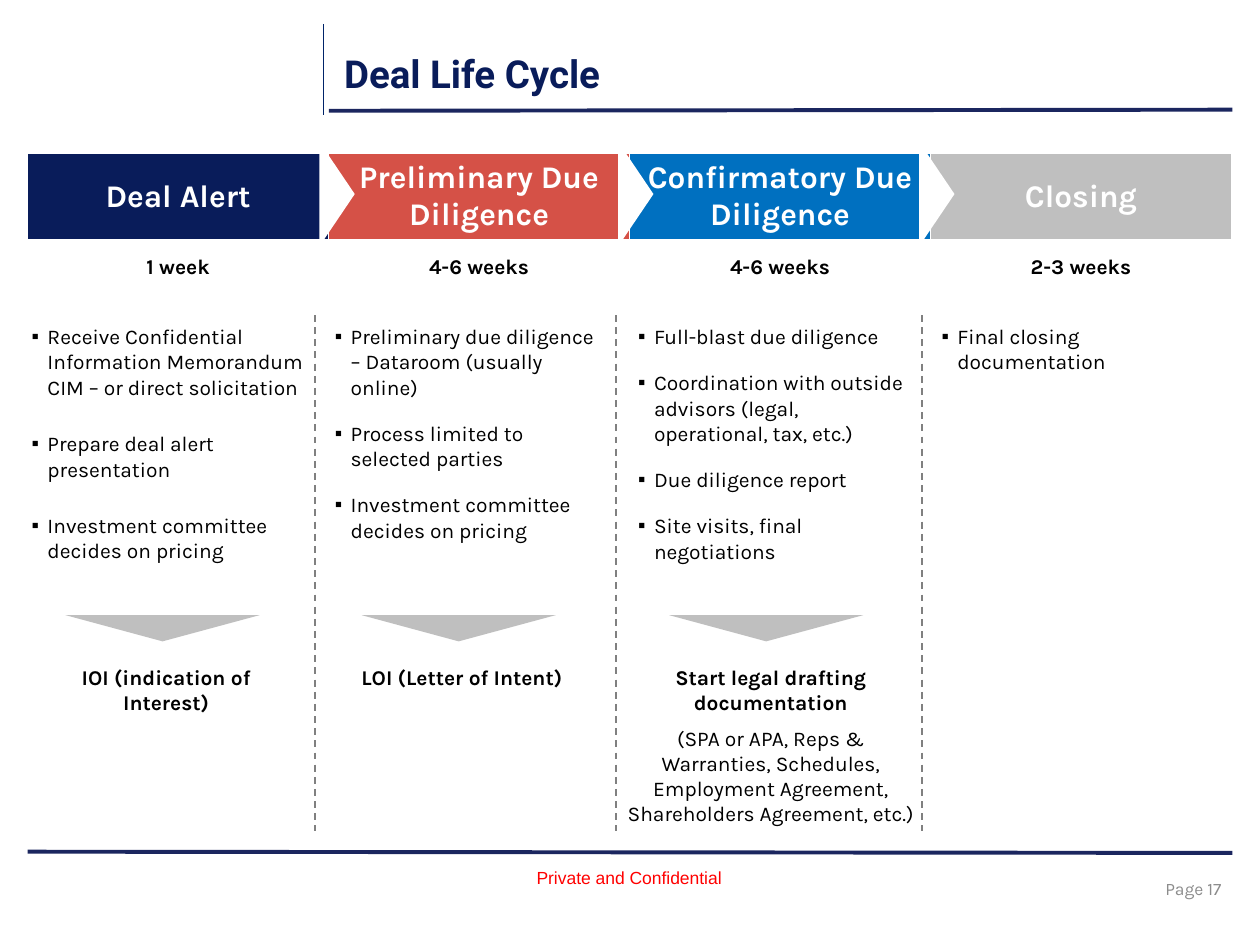
from typing import NamedTuple

from pptx import Presentation
from pptx.dml.color import RGBColor
from pptx.enum.dml import MSO_LINE_DASH_STYLE as Dash
from pptx.enum.shapes import MSO_CONNECTOR, MSO_SHAPE
from pptx.enum.text import MSO_ANCHOR as Anchor, MSO_AUTO_SIZE as AutoSize, PP_ALIGN as Align
from pptx.oxml.ns import qn
from pptx.util import Pt
from lxml.etree import SubElement

COLORS = {
    "navy": "091C5A", "red": "D55147", "blue": "0070C0", "silver": "BFBFBF",
    "rule": "1B265F", "title_rule": "002368", "dash": "808080",
    "page": "8C8C8C", "notice": "FF0000", "white": "FFFFFF", "black": "000000",
}
COMPARISON_LAYOUT = 4  # a title and four body placeholders
TABLE_LEFT, TABLE_TOP, COLUMN_WIDTH = 15.8, 87.8, 172
HEADER_HEIGHT, DURATION_HEIGHT = 48, 31
LIST_LEFT, LIST_PITCH, LIST_TOP = 15.1, 173.3, 182
LIST_WIDTH, LIST_HEIGHT = 161.5, 297
NOTCH_WIDTH, NOTCH_HEIGHT, NOTCH_TOP = 59.8, 20.2, 100.8
ARROW_WIDTH, ARROW_HEIGHT, ARROW_TOP = 111, 15, 351.5
OUTCOME_TOP = 376
DIVIDER_TOP, DIVIDER_BOTTOM = 180, 475


class Stage(NamedTuple):
    name: str
    color: str
    duration: str
    tasks: list[str]
    space_after: float = 6


class Milestone(NamedTuple):
    """What ends a stage: its arrow, the text below and the divider to the right."""
    arrow_left: float
    text_left: float
    text_width: float
    text_height: float
    outcome: str
    detail: str
    notch_left: float
    divider_x: float


class Rule(NamedTuple):
    x1: float
    y1: float
    x2: float
    y2: float
    color: str
    weight: float
    dashed: bool = False


STAGES = [
    Stage("Deal Alert", "navy", "1 week", [
        "Receive Confidential Information Memorandum CIM – or direct solicitation",
        "Prepare deal alert presentation",
        "Investment committee decides on pricing"], 12),
    Stage("Preliminary Due Diligence", "red", "4-6 weeks", [
        "Preliminary due diligence – Dataroom (usually online)",
        "Process limited to selected parties",
        "Investment committee decides on pricing"]),
    Stage("Confirmatory Due Diligence", "blue", "4-6 weeks", [
        "Full-blast due diligence",
        "Coordination with outside advisors (legal, operational, tax, etc.)",
        "Due diligence report",
        "Site visits, final negotiations"]),
    Stage("Closing", "silver", "2-3 weeks", ["Final closing documentation"]),
]
MILESTONES = [
    Milestone(37.4, 30, 130, 36, "IOI (indication of Interest)", "", 162.7, 180),
    Milestone(206.6, 184, 160, 22, "LOI (Letter of Intent)", "", 333.4, 352),
    Milestone(382.3, 353.5, 174, 99, "Start legal drafting documentation",
              "(SPA or APA, Reps & Warranties, Schedules, Employment Agreement, "
              "Shareholders Agreement, etc.)", 505.4, 527),
]
RULES = [
    Rule(15.8, 486.7, 704.2, 487.4, "rule", 2.25),
    Rule(188, 63.3, 704.2, 62.7, "rule", 2.25),
    Rule(185, 13.7, 185, 66, "title_rule", 0.75),
    *(Rule(m.divider_x, DIVIDER_TOP, m.divider_x, DIVIDER_BOTTOM, "dash", 1, True)
      for m in MILESTONES),
]


def rgb(color: str) -> RGBColor:
    return RGBColor.from_string(COLORS[color])


def add_run(paragraph, text: str, size: float, color: str = "black",
            bold: bool = False, font: str = "Karla") -> None:
    run = paragraph.add_run()
    run.text = text
    run.font.name, run.font.size, run.font.bold = font, Pt(size), bold
    run.font.color.rgb = rgb(color)


def place(shape, left: float, top: float, width: float, height: float) -> None:
    shape.left, shape.top = Pt(left), Pt(top)
    shape.width, shape.height = Pt(width), Pt(height)


def add_text_frame(slide, left: float, top: float, width: float, height: float):
    frame = slide.shapes.add_textbox(Pt(left), Pt(top), Pt(width), Pt(height)).text_frame
    frame.word_wrap = True
    return frame


def draw_rule(slide, rule: Rule) -> None:
    connector = slide.shapes.add_connector(
        MSO_CONNECTOR.STRAIGHT, Pt(rule.x1), Pt(rule.y1), Pt(rule.x2), Pt(rule.y2))
    connector.line.color.rgb = rgb(rule.color)
    connector.line.width = Pt(rule.weight)
    if rule.dashed:
        connector.line.dash_style = Dash.DASH
    SubElement(connector._element.spPr, qn("a:effectLst"))


def draw_triangle(slide, left: float, top: float, width: float, height: float,
                  rotation: float, color: str) -> None:
    triangle = slide.shapes.add_shape(
        MSO_SHAPE.ISOSCELES_TRIANGLE, Pt(left), Pt(top), Pt(width), Pt(height))
    triangle.rotation = rotation
    triangle.shadow.inherit = False
    triangle.fill.solid()
    triangle.fill.fore_color.rgb = rgb(color)
    triangle.line.fill.background()


def add_bullet(paragraph) -> None:
    properties = paragraph._p.get_or_add_pPr()
    properties.set("marL", str(Pt(9)))
    properties.set("indent", str(-Pt(9)))
    SubElement(properties, qn("a:buFont")).set("typeface", "Arial")
    SubElement(properties, qn("a:buChar")).set("char", "▪")


def fill_title(title) -> None:
    place(title, 189.4, 19.4, 517.7, 44.6)
    frame = title.text_frame
    frame.auto_size, frame.vertical_anchor = AutoSize.NONE, Anchor.MIDDLE
    frame.paragraphs[0].alignment = Align.LEFT
    add_run(frame.paragraphs[0], "Deal Life Cycle", 22, "navy", True, "Roboto")


def fill_task_list(body, stage: Stage, index: int) -> None:
    place(body, LIST_LEFT + index * LIST_PITCH, LIST_TOP, LIST_WIDTH, LIST_HEIGHT)
    frame = body.text_frame
    frame.auto_size, frame.vertical_anchor = AutoSize.NONE, Anchor.TOP
    frame.margin_left = frame.margin_right = frame.margin_top = frame.margin_bottom = Pt(3)
    for number, task in enumerate(stage.tasks):
        paragraph = frame.add_paragraph() if number else frame.paragraphs[0]
        add_bullet(paragraph)
        paragraph.space_before = Pt(6 if number else 0)
        paragraph.space_after = Pt(stage.space_after)
        add_run(paragraph, task, 12)


def draw_stage_table(slide) -> None:
    table = slide.shapes.add_table(
        2, len(STAGES), Pt(TABLE_LEFT), Pt(TABLE_TOP), Pt(COLUMN_WIDTH * len(STAGES)),
        Pt(HEADER_HEIGHT + DURATION_HEIGHT)).table
    table.horz_banding = False
    table.rows[0].height, table.rows[1].height = Pt(HEADER_HEIGHT), Pt(DURATION_HEIGHT)
    for column, stage in enumerate(STAGES):
        table.columns[column].width = Pt(COLUMN_WIDTH)
        header, duration = table.cell(0, column), table.cell(1, column)
        header.fill.solid()
        header.fill.fore_color.rgb = rgb(stage.color)
        duration.fill.background()
        for cell, text, size, color in ((header, stage.name, 18, "white"),
                                        (duration, stage.duration, 12, "black")):
            cell.vertical_anchor = Anchor.MIDDLE
            paragraph = cell.text_frame.paragraphs[0]
            paragraph.alignment = Align.CENTER
            add_run(paragraph, text, size, color, True)


def draw_milestone(slide, milestone: Milestone) -> None:
    draw_triangle(slide, milestone.notch_left, NOTCH_TOP, NOTCH_WIDTH, NOTCH_HEIGHT, 90, "white")
    draw_triangle(slide, milestone.arrow_left, ARROW_TOP, ARROW_WIDTH, ARROW_HEIGHT, 180, "silver")
    frame = add_text_frame(slide, milestone.text_left, OUTCOME_TOP,
                           milestone.text_width, milestone.text_height)
    frame.margin_left = frame.margin_right = Pt(3)
    outcome = frame.paragraphs[0]
    outcome.alignment = Align.CENTER
    add_run(outcome, milestone.outcome, 12, bold=True)
    if milestone.detail:
        detail = frame.add_paragraph()
        detail.alignment, detail.space_before = Align.CENTER, Pt(6)
        add_run(detail, milestone.detail, 12)


def draw_footer(slide) -> None:
    notice = add_text_frame(slide, 299.5, 491.8, 121, 19.4)
    notice.word_wrap = False
    add_run(notice.paragraphs[0], "Private and Confidential", 10, "notice", font="Arial")
    page = add_text_frame(slide, 537, 493.2, 168, 28.8)
    page.vertical_anchor = Anchor.MIDDLE
    page.paragraphs[0].alignment = Align.RIGHT
    add_run(page.paragraphs[0], "Page 17", 10, "page")


def main() -> None:
    deck = Presentation()
    deck.slide_width, deck.slide_height = Pt(720), Pt(540)
    slide = deck.slides.add_slide(deck.slide_layouts[COMPARISON_LAYOUT])
    title, *bodies = slide.placeholders
    fill_title(title)
    for index, (body, stage) in enumerate(zip(bodies, STAGES)):
        fill_task_list(body, stage, index)
    draw_stage_table(slide)
    for rule in RULES:
        draw_rule(slide, rule)
    for milestone in MILESTONES:
        draw_milestone(slide, milestone)
    draw_footer(slide)
    deck.save("out.pptx")


if __name__ == "__main__":
    main()
